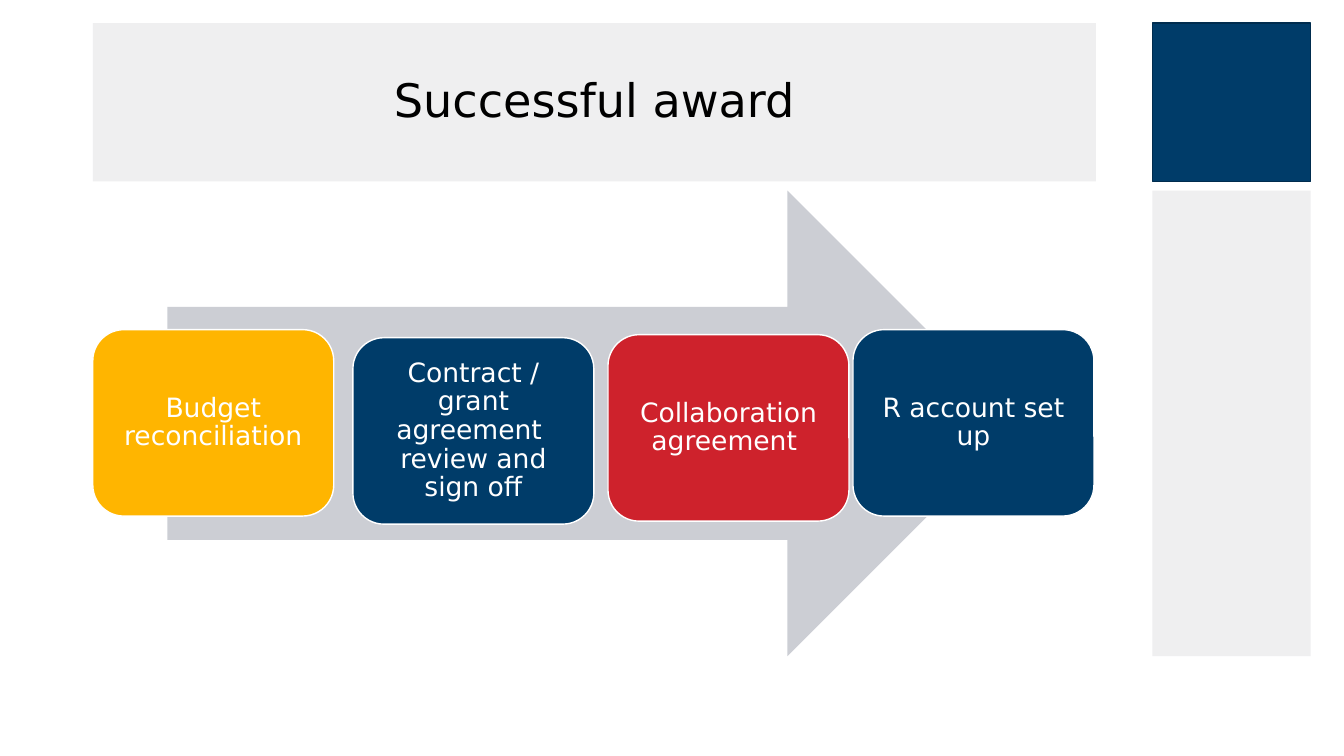
from dataclasses import dataclass

from pptx import Presentation, util as u
from pptx.dml.color import RGBColor
from pptx.enum import shapes, text

PX = 9144


@dataclass(frozen=True)
class Theme:
    font: str = "DejaVu Sans"
    title_size: int = 33
    step_size: int = 19
    black: str = "000000"
    white: str = "FFFFFF"
    panel: str = "EFEFF0"
    arrow: str = "CCCED4"
    navy: str = "003C69"
    navy_edge: str = "002C4E"
    gold: str = "FFB500"
    red: str = "CE222C"


T = Theme()
SHAPE = shapes.MSO_SHAPE


def px(n):
    return u.Emu(n * PX)


def add_block(s, kind, x, y, w, h, fill, line=None):
    sp = s.shapes.add_shape(kind, px(x), px(y), px(w), px(h))
    sp.shadow.inherit = False
    sp.fill.solid()
    sp.fill.fore_color.rgb = RGBColor.from_string(fill)
    if line:
        sp.line.color.rgb = RGBColor.from_string(line)
        sp.line.width = u.Pt(1)
    else:
        sp.line.fill.background()
    return sp


def set_text(sp, words, size, color, inset):
    tf = sp.text_frame
    tf.word_wrap = True
    tf.vertical_anchor = text.MSO_ANCHOR.MIDDLE
    tf.margin_left = tf.margin_right = tf.margin_top = tf.margin_bottom = px(inset)
    p = tf.paragraphs[0]
    p.text = words
    p.alignment = text.PP_ALIGN.CENTER
    p.line_spacing = 0.9
    p.font.name = T.font
    p.font.size = u.Pt(size)
    p.font.color.rgb = RGBColor.from_string(color)


def add_step(s, x, y, words, fill):
    sp = add_block(s, SHAPE.ROUNDED_RECTANGLE, x, y, 239, 185, fill, T.white)
    set_text(sp, words, T.step_size, T.white, 8)


def main():
    prs = Presentation()
    prs.slide_width, prs.slide_height = px(1333), px(750)
    s = prs.slides.add_slide(prs.slide_layouts[6])

    add_block(s, SHAPE.RECTANGLE, 1143, 189, 157, 462, T.panel)
    add_block(s, SHAPE.RECTANGLE, 1143, 23, 157, 157, T.navy, T.navy_edge)
    title = add_block(s, SHAPE.RECTANGLE, 92, 23, 995, 157, T.panel)
    set_text(title, "Successful award", T.title_size, T.black, 10)

    add_block(s, SHAPE.RIGHT_ARROW, 166, 189, 846, 462, T.arrow)
    for x, y, words, fill in (
        (92, 327, "Budget reconciliation", T.gold),
        (603, 332, "Collaboration agreement ", T.red),
        (350, 335, "Contract / grant agreement  review and sign off", T.navy),
        (846, 327, "R account set up", T.navy),
    ):
        add_step(s, x, y, words, fill)

    prs.save("out.pptx")


if __name__ == "__main__":
    main()
